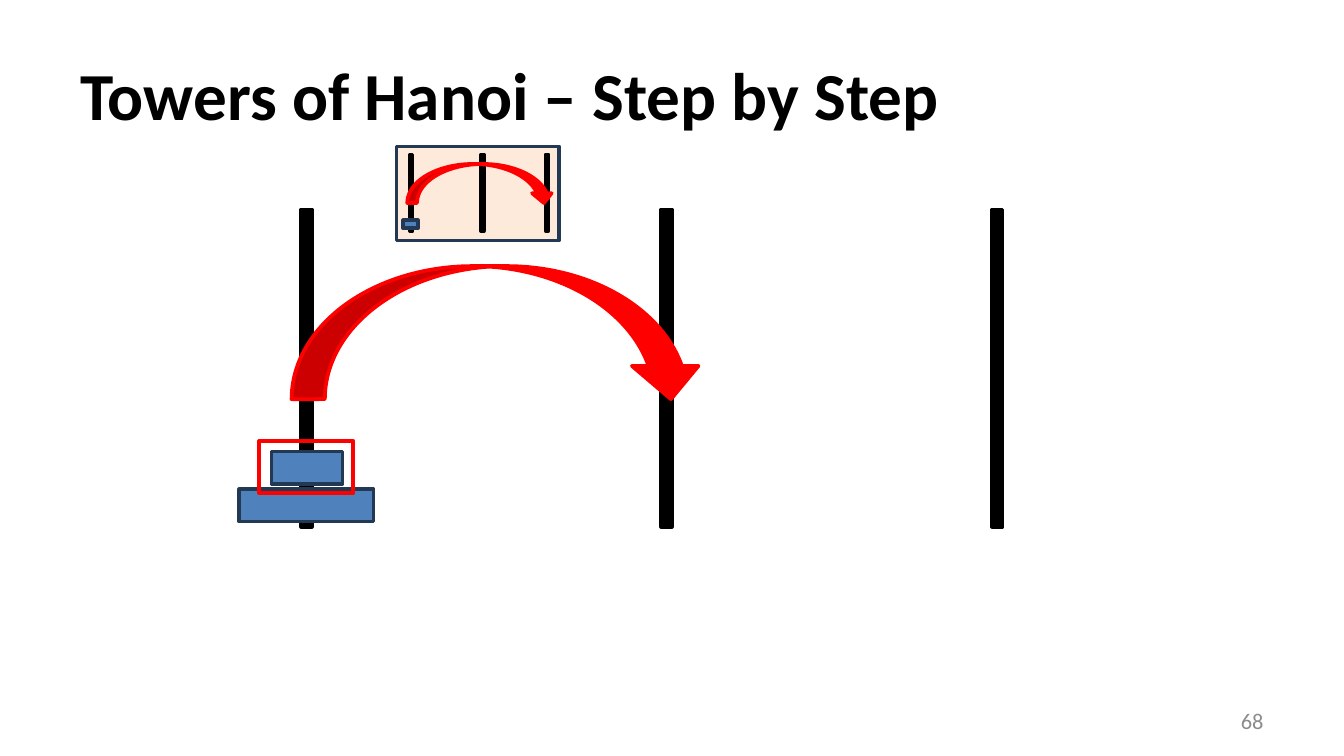
from dataclasses import dataclass

from pptx import Presentation
from pptx.dml.color import RGBColor
from pptx.enum.shapes import MSO_SHAPE
from pptx.enum.text import MSO_ANCHOR, PP_ALIGN
from pptx.util import Inches, Pt

RECT = MSO_SHAPE.RECTANGLE
ARC = MSO_SHAPE.CURVED_DOWN_ARROW
MIDDLE = MSO_ANCHOR.MIDDLE
LEFT, RIGHT = PP_ALIGN.LEFT, PP_ALIGN.RIGHT
COLS, ROWS = 100, 56.25


@dataclass(frozen=True)
class Theme:
    font: str = "Calibri"
    ink: str = "000000"
    gray: str = "8C8C8C"
    disk: str = "4F81BD"
    edge: str = "233953"
    mark: str = "FF0000"
    panel: str = "FDEADA"
    title: int = 36
    small: int = 12
    line: int = 2


def write(frame, text, size, color, font, bold=False, align=LEFT):
    frame.word_wrap = True
    frame.vertical_anchor = MIDDLE
    para = frame.paragraphs[0]
    para.alignment = align
    run = para.add_run()
    run.text = text
    run.font.name = font
    run.font.size = Pt(size)
    run.font.bold = bold
    run.font.color.rgb = RGBColor.from_string(color)


class Board:
    """Draws on one slide; lengths are grid columns and rows."""

    def __init__(self, deck, theme):
        self.deck, self.theme = deck, theme
        self.slide = deck.slides.add_slide(deck.slide_layouts[6])
        self.layer = self.slide.shapes

    def place(self, x, y, w, h):
        col = self.deck.slide_width / COLS
        row = self.deck.slide_height / ROWS
        return [round(v) for v in (x * col, y * row, w * col, h * row)]

    def text(self, text, x, y, w, h, **style):
        box = self.layer.add_textbox(*self.place(x, y, w, h))
        write(box.text_frame, text, font=self.theme.font, **style)

    def shape(self, kind, x, y, w, h, fill, line):
        item = self.layer.add_shape(kind, *self.place(x, y, w, h))
        item.shadow.inherit = False
        if fill:
            item.fill.solid()
            item.fill.fore_color.rgb = RGBColor.from_string(fill)
        else:
            item.fill.background()
        item.line.color.rgb = RGBColor.from_string(line)
        item.line.width = Pt(self.theme.line)

    def peg(self, x, y, w, h):
        self.shape(RECT, x, y, w, h, self.theme.ink, self.theme.ink)

    def disk(self, x, y, w, h):
        self.shape(RECT, x, y, w, h, self.theme.disk, self.theme.edge)

    def frame(self, x, y, w, h):
        self.shape(RECT, x, y, w, h, None, self.theme.mark)

    def panel(self, x, y, w, h):
        self.shape(RECT, x, y, w, h, self.theme.panel, self.theme.edge)

    def move(self, x, y, w, h):
        self.shape(ARC, x, y, w, h, self.theme.mark, self.theme.mark)

    def group(self):
        self.layer = self.slide.shapes.add_group_shape().shapes


def main():
    deck = Presentation()
    deck.slide_width = Inches(10)
    deck.slide_height = deck.slide_width * 9 // 16
    theme = Theme()
    board = Board(deck, theme)

    # Title and page number
    board.text("Towers of Hanoi – Step by Step", 5, 2.3, 90, 9.4,
               size=theme.title, color=theme.ink, bold=True)
    board.text("68", 71.7, 52.1, 23.3, 3,
               size=theme.small, color=theme.gray, align=RIGHT)

    # Pegs, with the disks on the first one
    for x in (22.4, 49.2, 73.8):
        board.peg(x, 15.6, 0.8, 23.6)
    for x, y, w in ((17.8, 36.4, 10), (20.2, 33.6, 5.3)):
        board.disk(x, y, w, 2.4)

    # Current move
    board.frame(19.3, 32.8, 7, 3.9)
    board.move(21.7, 19.8, 30.7, 9.9)

    # Inset with the whole task
    board.group()
    board.panel(29.5, 10.9, 12.1, 7)
    for x in (30.5, 35.8, 40.6):
        board.peg(x, 11.5, 0.2, 5.7)
    board.disk(30, 16.4, 1.1, 0.6)
    board.move(30.3, 12.2, 10.9, 2.9)

    deck.save("out.pptx")


if __name__ == "__main__":
    main()
